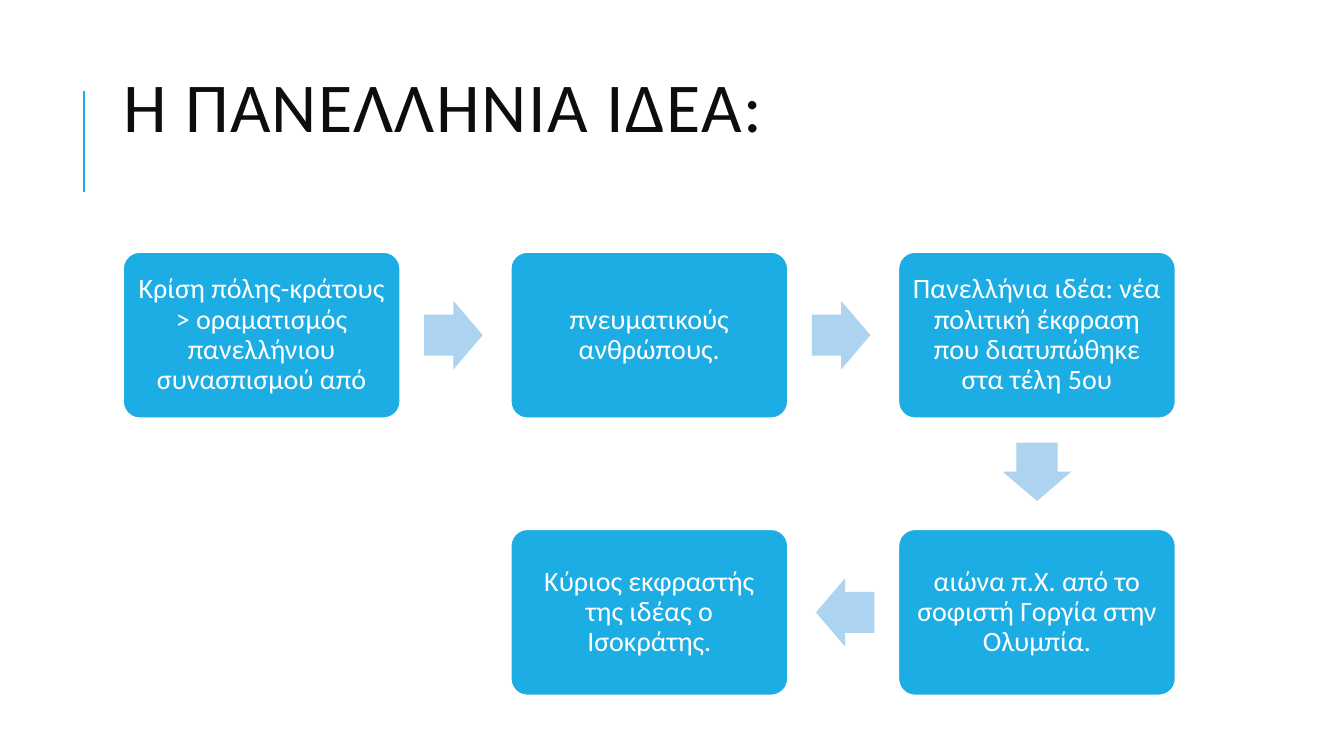
from dataclasses import dataclass

from lxml import etree
from pptx import Presentation, util as u
from pptx.dml.color import RGBColor
from pptx.enum import lang, shapes, text
from pptx.oxml.ns import qn


@dataclass(frozen=True)
class Theme:
    font: str = "Calibri"
    accent: str = "1CADE4"
    arrow: str = "ACD3EF"
    light: str = "FFFFFF"
    dark: str = "0D0D0D"
    title_pt: int = 50
    step_pt: int = 20


@dataclass(frozen=True)
class Grid:
    """Three columns and two rows of equal cells, in inches."""
    left: float = 1.22
    top: float = 2.5
    width: float = 10.44
    height: float = 4.4
    cell_w: float = 2.75
    cell_h: float = 1.65
    cols: int = 3
    rows: int = 2

    def center(self, col: int, row: int) -> tuple[float, float]:
        pitch_x = (self.width - self.cell_w) / (self.cols - 1)
        pitch_y = (self.height - self.cell_h) / (self.rows - 1)
        return (self.left + self.cell_w / 2 + col * pitch_x,
                self.top + self.cell_h / 2 + row * pitch_y)


@dataclass(frozen=True)
class Step:
    col: int
    row: int
    label: str


THEME = Theme()
GRID = Grid()
ARROW_W, ARROW_H, ARROW_SETBACK = 0.58, 0.68, 0.02
ROTATION = {(1, 0): 0, (0, 1): 90, (-1, 0): 180}

STEPS = [
    Step(0, 0, "Κρίση πόλης-κράτους > οραματισμός πανελλήνιου συνασπισμού από"),
    Step(1, 0, "πνευματικούς ανθρώπους."),
    Step(2, 0, "Πανελλήνια ιδέα: νέα πολιτική έκφραση που διατυπώθηκε στα τέλη 5ου"),
    Step(2, 1, "αιώνα π.Χ. από το σοφιστή Γοργία στην Ολυμπία."),
    Step(1, 1, "Κύριος εκφραστής της ιδέας ο Ισοκράτης."),
]


def color(code: str) -> RGBColor:
    return RGBColor.from_string(code)


def add_run(p, words: str, size: int, code: str):
    r = p.add_run()
    r.text = words
    r.font.name = THEME.font
    r.font.size = u.Pt(size)
    r.font.color.rgb = color(code)
    r.font.language_id = lang.MSO_LANGUAGE_ID.GREEK
    return r


def add_centered(s, kind, center: tuple[float, float], w: float, h: float, fill: str):
    x, y = center
    sp = s.shapes.add_shape(kind, u.Inches(x - w / 2), u.Inches(y - h / 2),
                            u.Inches(w), u.Inches(h))
    sp.shadow.inherit = False
    sp.fill.solid()
    sp.fill.fore_color.rgb = color(fill)
    return sp


def add_title(s, words: str) -> None:
    sp = s.shapes.title
    sp.left, sp.top, sp.width, sp.height = map(u.Inches, (1.12, 0.64, 10.63, 1.64))
    tf = sp.text_frame
    tf.auto_size = text.MSO_AUTO_SIZE.NONE
    tf.word_wrap = True
    tf.vertical_anchor = text.MSO_ANCHOR.TOP
    tf.margin_top = u.Inches(0.14)
    p = tf.paragraphs[0]
    p.alignment = text.PP_ALIGN.LEFT
    p.line_spacing = 0.8
    r = add_run(p, words, THEME.title_pt, THEME.dark)
    # Capitals and letter spacing of one point
    r.font._element.set("cap", "all")
    r.font._element.set("spc", "100")


def add_rule(s) -> None:
    x = u.Inches(0.83)
    line = s.shapes.add_connector(shapes.MSO_CONNECTOR.STRAIGHT,
                                  x, u.Inches(1.9), x, u.Inches(0.9))
    line.line.color.rgb = color(THEME.accent)
    line.line.width = u.Pt(1.5)
    etree.SubElement(line._element.spPr, qn("a:effectLst"))


def add_step(s, step: Step) -> None:
    sp = add_centered(s, shapes.MSO_SHAPE.ROUNDED_RECTANGLE,
                      GRID.center(step.col, step.row),
                      GRID.cell_w, GRID.cell_h, THEME.accent)
    sp.adjustments[0] = 0.1
    sp.line.color.rgb = color(THEME.light)
    sp.line.width = u.Pt(1.25)
    tf = sp.text_frame
    tf.word_wrap = True
    tf.vertical_anchor = text.MSO_ANCHOR.MIDDLE
    tf.margin_left = tf.margin_right = u.Inches(0.08)
    tf.margin_top = tf.margin_bottom = u.Inches(0.08)
    p = tf.paragraphs[0]
    p.alignment = text.PP_ALIGN.CENTER
    p.line_spacing = 0.9
    add_run(p, step.label, THEME.step_pt, THEME.light)


def add_arrow(s, start: Step, end: Step) -> None:
    dx, dy = end.col - start.col, end.row - start.row
    x1, y1 = GRID.center(start.col, start.row)
    x2, y2 = GRID.center(end.col, end.row)
    middle = ((x1 + x2) / 2 - dx * ARROW_SETBACK,
              (y1 + y2) / 2 - dy * ARROW_SETBACK)
    sp = add_centered(s, shapes.MSO_SHAPE.RIGHT_ARROW, middle,
                      ARROW_W, ARROW_H, THEME.arrow)
    sp.adjustments[0], sp.adjustments[1] = 0.6, 0.5
    sp.rotation = ROTATION[dx, dy]
    sp.line.fill.background()


def main() -> None:
    prs = Presentation()
    prs.slide_width, prs.slide_height = u.Inches(13.33), u.Inches(7.5)
    s = prs.slides.add_slide(prs.slide_layouts.get_by_name("Title Only"))

    # Heading
    add_rule(s)
    add_title(s, "Η ΠΑΝΕΛΛΉΝΙΑ ΙΔΈΑ:")

    # Flow of steps, joined by arrows
    for step in STEPS:
        add_step(s, step)
    for start, end in zip(STEPS, STEPS[1:]):
        add_arrow(s, start, end)

    prs.save("out.pptx")


if __name__ == "__main__":
    main()
